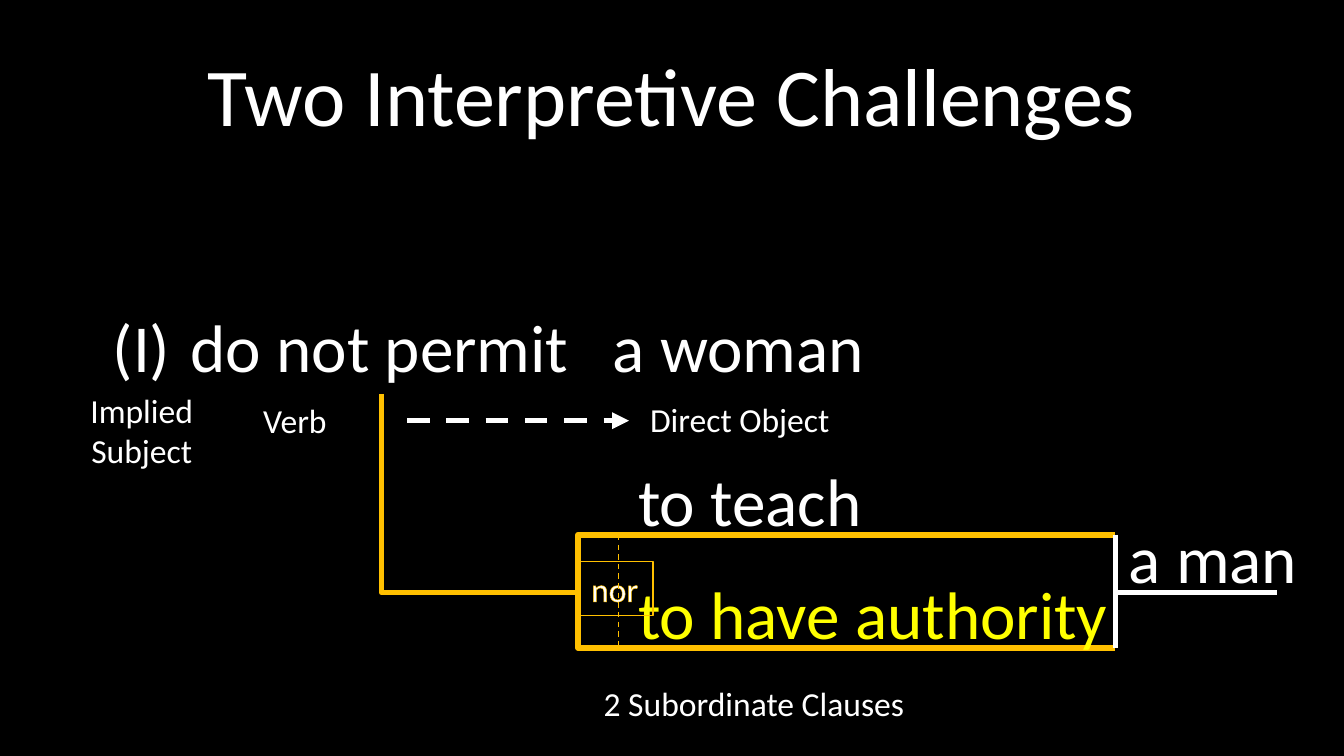
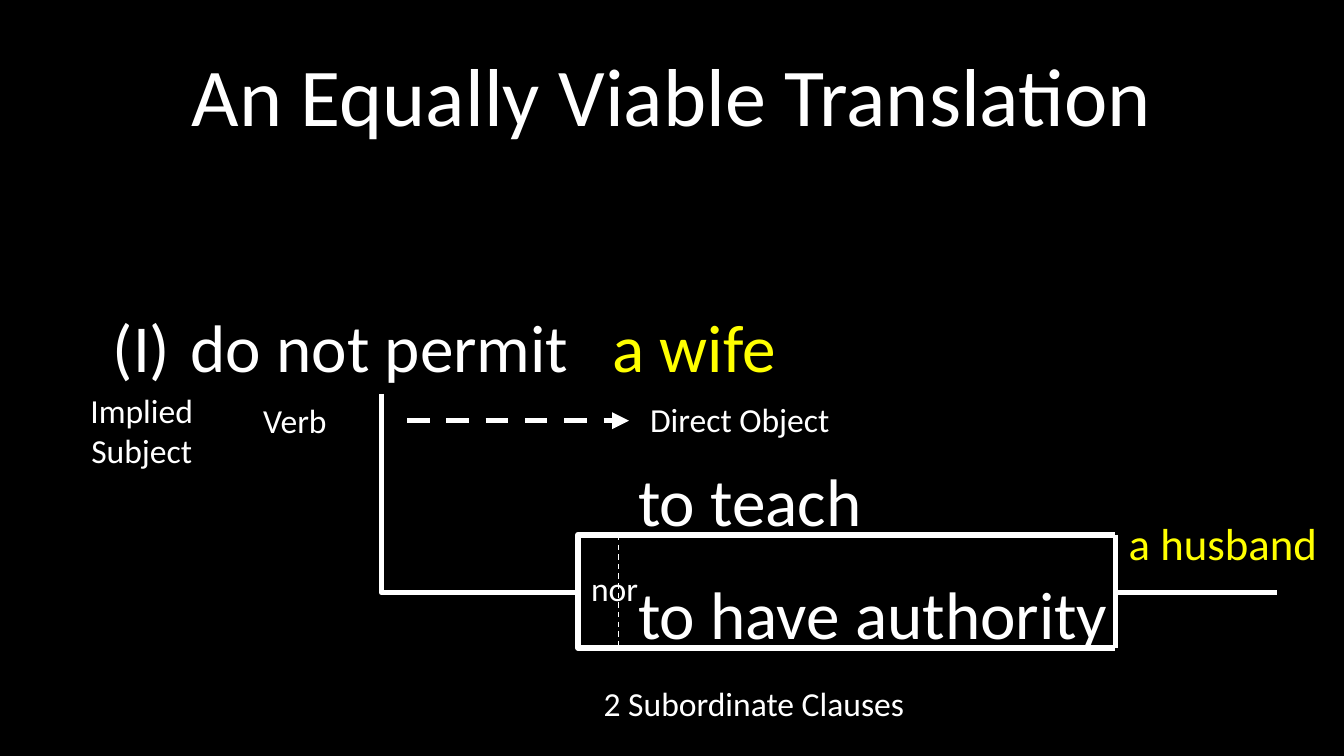
"""Build two slides that diagram a sentence and its alternative translation."""
from dataclasses import dataclass

from lxml import etree
from pptx import Presentation
from pptx.dml.color import RGBColor
from pptx.enum.dml import MSO_LINE
from pptx.enum.shapes import MSO_CONNECTOR
from pptx.enum.text import MSO_ANCHOR, MSO_AUTO_SIZE, PP_ALIGN
from pptx.oxml.ns import qn
from pptx.util import Inches, Pt

STRAIGHT, ELBOW = MSO_CONNECTOR.STRAIGHT, MSO_CONNECTOR.ELBOW
DASH = MSO_LINE.DASH
LEFT, CENTER = PP_ALIGN.LEFT, PP_ALIGN.CENTER
TOP, MIDDLE = MSO_ANCHOR.TOP, MSO_ANCHOR.MIDDLE
NO_FIT, GROW = MSO_AUTO_SIZE.NONE, MSO_AUTO_SIZE.SHAPE_TO_FIT_TEXT


@dataclass(frozen=True)
class Theme:
    """Colours, font, type sizes and line widths of the deck."""
    black: RGBColor = RGBColor(0, 0, 0)
    white: RGBColor = RGBColor(255, 255, 255)
    gold: RGBColor = RGBColor(255, 192, 0)
    yellow: RGBColor = RGBColor(255, 255, 0)
    font: str = "Calibri"
    title: int = 44
    phrase: int = 36
    small_phrase: int = 24
    label: int = 18
    thick: float = 3
    thin: float = 0.75


THEME = Theme()
PAGE_WIDTH = 10
PAGE_HEIGHT = PAGE_WIDTH * 9 / 16
STEM_X, FORK_X, JOIN_X, OBJECT_END_X = 2.84, 4.3, 8.3, 9.5
TEACH_Y, MIDDLE_Y, AUTHORITY_Y = 3.98, 4.41, 4.82
VERB_Y, ARROW_Y, NOR_X = 2.93, 3.13, 4.6
PHRASE_Y, PHRASE_HEIGHT, LABEL_HEIGHT = 2.22, 0.71, 0.4


def add_text(page, text, place, size, color=THEME.white, align=LEFT,
             wrap=False, anchor=TOP, fit=GROW):
    """Add a text box whose lines become paragraphs."""
    box = page.shapes.add_textbox(*map(Inches, place))
    frame = box.text_frame
    frame.text = text
    frame.word_wrap = wrap
    frame.auto_size = fit
    frame.vertical_anchor = anchor
    for para in frame.paragraphs:
        para.alignment = align
        para.font.name = THEME.font
        para.font.size = Pt(size)
        para.font.color.rgb = color
    return box


def add_phrase(page, text, left, top, width, color=THEME.white):
    """Add a large phrase of the sentence."""
    add_text(page, text, (left, top, width, PHRASE_HEIGHT), THEME.phrase, color)


def add_label(page, text, left, top, width, height=LABEL_HEIGHT):
    """Add a small centred grammar label."""
    add_text(page, text, (left, top, width, height), THEME.label,
             align=CENTER, wrap=True)


def add_line(page, start, end, color, kind=STRAIGHT, width=THEME.thick,
             dashed=False, arrow=False):
    """Add a line; an elbow turns at its start, going vertical first."""
    line = page.shapes.add_connector(kind, *map(Inches, (*start, *end)))
    line.line.color.rgb = color
    line.line.width = Pt(width)
    if dashed:
        line.line.dash_style = DASH
    properties = line._element.spPr
    if arrow:
        etree.SubElement(properties.find(qn("a:ln")), qn("a:tailEnd"),
                         type="triangle")
    if kind == ELBOW:
        geometry = properties.find(qn("a:prstGeom"))
        guides = geometry.find(qn("a:avLst"))
        if guides is None:
            guides = etree.SubElement(geometry, qn("a:avLst"))
        etree.SubElement(guides, qn("a:gd"), name="adj1", fmla="val 0")
    etree.SubElement(properties, qn("a:effectLst"))


def outline_text(box, color):
    """Give a box and its letters a thin outline."""
    box.line.color.rgb = color
    box.line.width = Pt(THEME.thin)
    for para in box.text_frame.paragraphs:
        for span in para.runs:
            outline = etree.Element(qn("a:ln"), w=str(Pt(THEME.thin)))
            fill = etree.SubElement(outline, qn("a:solidFill"))
            etree.SubElement(fill, qn("a:srgbClr"), val=str(color))
            span._r.get_or_add_rPr().insert(0, outline)


def add_page(deck, title):
    """Add a black page with a centred title."""
    page = deck.slides.add_slide(deck.slide_layouts[6])
    page.background.fill.solid()
    page.background.fill.fore_color.rgb = THEME.black
    add_text(page, title, (0.5, 0.23, 9, 0.94), THEME.title,
             align=CENTER, wrap=True, anchor=MIDDLE, fit=NO_FIT)
    return page


def add_main_clause(page, recipient, width, color):
    """Add the subject, verb and direct object with their labels."""
    add_phrase(page, "(I)", 0.74, PHRASE_Y, 0.63)
    add_phrase(page, "do not permit", 1.32, PHRASE_Y, 3.04)
    add_label(page, "Implied\nSubject", 0.49, 2.85, 1.13, PHRASE_HEIGHT)
    add_label(page, "Verb", 1.63, VERB_Y, 1.13)
    add_phrase(page, recipient, 4.46, PHRASE_Y, width, color)
    add_label(page, "Direct Object", 4.7, 2.92, 1.61)


def add_fork(page, color, authority_color):
    """Add the branch from the verb to the two subordinate clauses."""
    fork = (FORK_X, MIDDLE_Y)
    add_line(page, (STEM_X, VERB_Y), fork, color, ELBOW)
    for y in (TEACH_Y, AUTHORITY_Y):
        add_line(page, fork, (JOIN_X, y), color, ELBOW)
    add_phrase(page, "to teach", 4.65, 3.37, 1.88)
    add_phrase(page, "to have authority", 4.65, 4.21, 3.73, authority_color)


def add_shared_object(page, text, place, size, color):
    """Join both clauses to the object they share."""
    add_line(page, (JOIN_X, TEACH_Y), (OBJECT_END_X, MIDDLE_Y), THEME.white, ELBOW)
    add_line(page, (JOIN_X, MIDDLE_Y), (JOIN_X, AUTHORITY_Y), THEME.white)
    add_text(page, text, place, size, color)


def add_conjunction(page, color, outlined):
    """Add the word between the clauses, its dashed line and the captions."""
    nor = add_text(page, "nor", (4.3, 4.18, 0.56, LABEL_HEIGHT), THEME.label)
    if outlined:
        outline_text(nor, color)
    add_line(page, (NOR_X, TEACH_Y), (NOR_X, AUTHORITY_Y), color,
             width=THEME.thin, dashed=True)
    add_line(page, (3.03, ARROW_Y), (4.68, ARROW_Y), THEME.white,
             dashed=True, arrow=True)
    add_label(page, "2 Subordinate Clauses", STEM_X, 5.03, 5.54)


def main():
    """Build and save the deck."""
    deck = Presentation()
    deck.slide_width = Inches(PAGE_WIDTH)
    deck.slide_height = Inches(PAGE_HEIGHT)

    page = add_page(deck, "Two Interpretive Challenges")
    add_main_clause(page, "a woman", 2.09, THEME.white)
    add_fork(page, THEME.gold, THEME.yellow)
    add_shared_object(page, "a man", (JOIN_X, 3.79, 1.47, PHRASE_HEIGHT),
                      THEME.phrase, THEME.white)
    add_conjunction(page, THEME.gold, outlined=True)

    page = add_page(deck, "An Equally Viable Translation")
    add_main_clause(page, "a wife", 1.43, THEME.yellow)
    add_fork(page, THEME.white, THEME.white)
    add_shared_object(page, "a husband", (JOIN_X, 3.79, 1.62, 0.5),
                      THEME.small_phrase, THEME.yellow)
    add_conjunction(page, THEME.white, outlined=False)

    deck.save("out.pptx")


if __name__ == "__main__":
    main()
